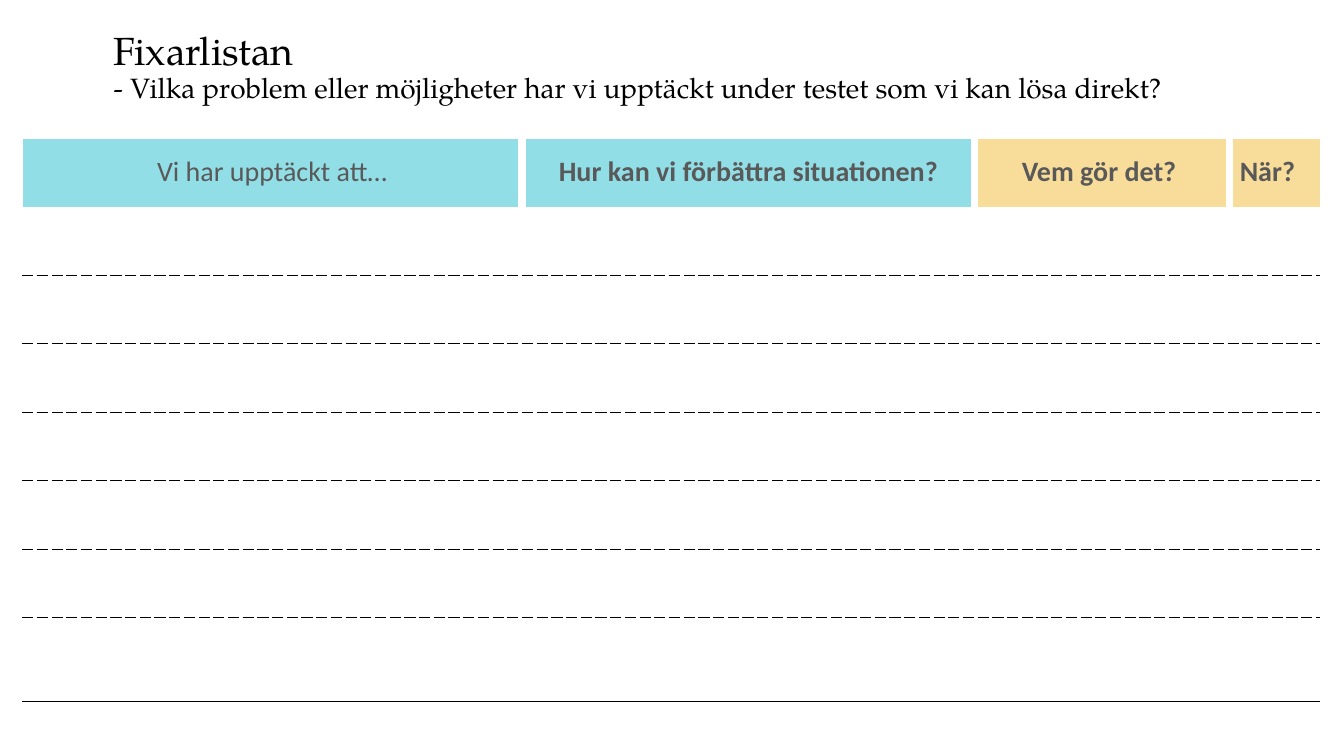
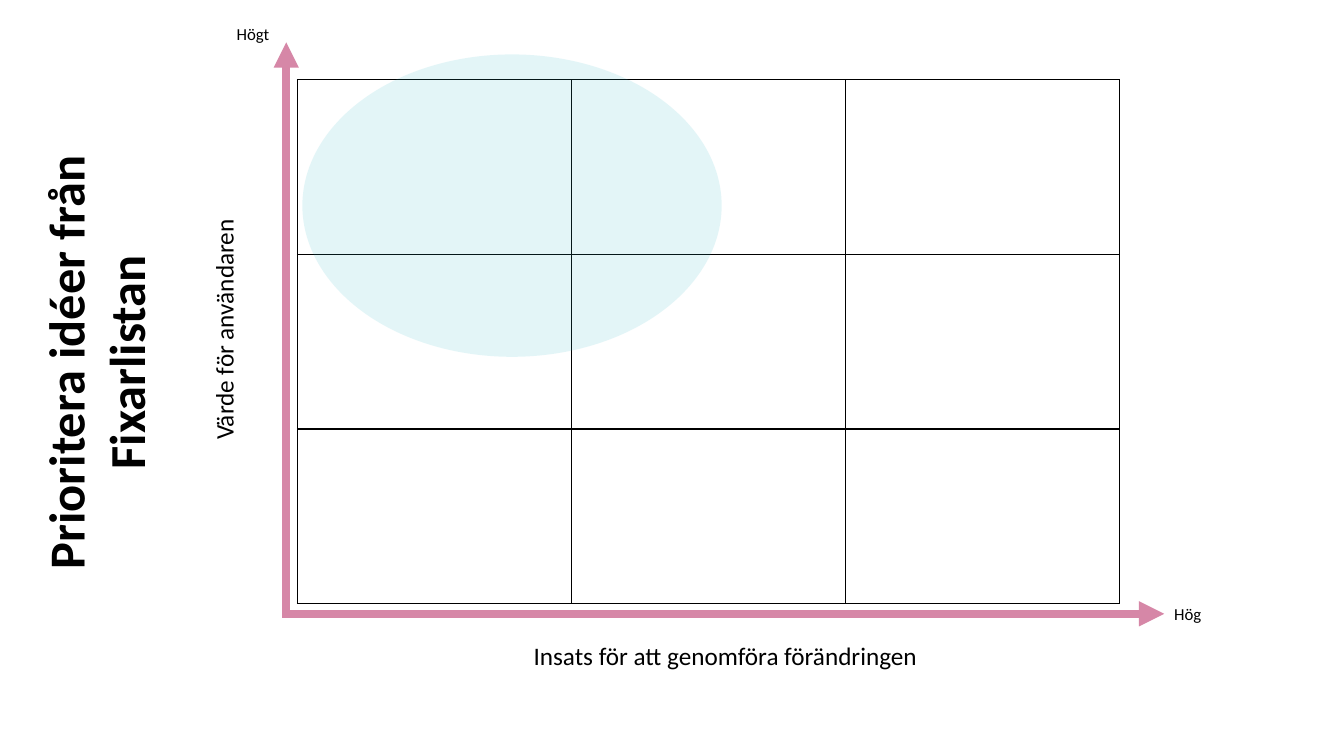
from dataclasses import dataclass

from lxml import etree
from pptx import Presentation, util as u
from pptx.dml.color import RGBColor
from pptx.enum import shapes, text
from pptx.oxml import ns

UNIT = u.Inches(1) // 12  # square grid: 160 columns by 90 rows
SLIDE_COLUMNS, SLIDE_ROWS = 160, 90


@dataclass(frozen=True)
class Theme:
    ink: str = "000000"
    paper: str = "FFFFFF"
    muted: str = "595959"
    aqua: str = "92DEE6"
    sand: str = "F8DD9A"
    teal: str = "2DB9C7"
    pink: str = "D687A7"
    body_font: str = "Calibri"
    title_font: str = "TeX Gyre Pagella"
    headline: int = 36
    title: int = 28
    subtitle: int = 20
    axis: int = 18
    scale_end: int = 12
    hairline: int = 1
    gap: int = 6
    axis_line: int = 6


THEME = Theme()
DASHED = (THEME.ink, THEME.hairline, "sysDash")
SOLID = (THEME.ink, THEME.hairline, "solid")
GUTTER = (THEME.paper, THEME.gap, "solid")
EDGE = (THEME.paper, THEME.hairline, "solid")


def grid(*lengths):
    return [round(length * UNIT) for length in lengths]


def sub(parent, tag, **attributes):
    return etree.SubElement(parent, ns.qn(tag), attributes)


def style(run, size, color=THEME.ink, font=THEME.body_font, bold=False):
    run.font.size = u.Pt(size)
    run.font.name = font
    run.font.bold = bold
    run.font.color.rgb = RGBColor.from_string(color)


def add_label(slide, box, wording, *sizes, font=THEME.body_font, bold=False,
              align=text.PP_ALIGN.LEFT, rotation=0):
    """Add a text box; each line takes its own size from sizes."""
    label = slide.shapes.add_textbox(*grid(*box))
    label.rotation = rotation
    frame = label.text_frame
    frame.word_wrap = True
    frame.text = wording
    paragraph = frame.paragraphs[0]
    paragraph.alignment = align
    for run, size in zip(paragraph.runs, sizes):
        style(run, size, font=font, bold=bold)
    return label


def set_borders(cell, left=None, right=None, top=None, bottom=None):
    properties = cell._tc.get_or_add_tcPr()
    for side, border in zip("LRTB", (left, right, top, bottom)):
        if border is None:
            sub(sub(properties, f"a:ln{side}", w="0"), "a:noFill")
            continue
        color, width, dash = border
        line = sub(properties, f"a:ln{side}", w=str(u.Pt(width)))
        sub(sub(line, "a:solidFill"), "a:srgbClr", val=color)
        sub(line, "a:prstDash", val=dash)


def fill_solid(fill, color):
    fill.solid()
    fill.fore_color.rgb = RGBColor.from_string(color)


def add_plain_table(slide, left, top, widths, heights):
    frame = slide.shapes.add_table(
        len(heights), len(widths),
        *grid(left, top, sum(widths), sum(heights)))
    table = frame.table
    table.first_row = table.horz_banding = False
    for column, width in zip(table.columns, grid(*widths)):
        column.width = width
    for row, height in zip(table.rows, grid(*heights)):
        row.height = height
    return table


def add_axis(slide, start, end):
    axis = slide.shapes.add_connector(
        shapes.MSO_CONNECTOR.STRAIGHT, *grid(*start, *end))
    axis.line.width = u.Pt(THEME.axis_line)
    axis.line.color.rgb = RGBColor.from_string(THEME.pink)
    sub(axis.line._get_or_add_ln(), "a:tailEnd", type="triangle")
    sub(axis._element.spPr, "a:effectLst")


def add_focus_area(slide, box, color, opacity):
    area = slide.shapes.add_shape(shapes.MSO_SHAPE.OVAL, *grid(*box))
    area.shadow.inherit = False
    area.line.fill.background()
    fill_solid(area.fill, color)
    tint = area._element.spPr.find(".//" + ns.qn("a:srgbClr"))
    sub(tint, "a:alpha", val=str(opacity * 1000))


def build_fix_list(slide):
    title = add_label(
        slide, (12.36, 1.56, 145.92, 13.08),
        "Fixarlistan\v- Vilka problem eller möjligheter har vi upptäckt "
        "under testet som vi kan lösa direkt?",
        THEME.title, THEME.subtitle, font=THEME.title_font)
    title.text_frame.vertical_anchor = text.MSO_ANCHOR.MIDDLE
    title.text_frame.paragraphs[0].line_spacing = 0.9

    headings = [
        ("Vi har upptäckt att…", THEME.aqua, False, text.PP_ALIGN.CENTER),
        ("Hur kan vi förbättra situationen?", THEME.aqua, True,
         text.PP_ALIGN.CENTER),
        ("Vem gör det? ", THEME.sand, True, text.PP_ALIGN.CENTER),
        ("När?", THEME.sand, True, text.PP_ALIGN.LEFT),
    ]
    table = add_plain_table(slide, 2.64, 16.44,
                            (59.52, 53.88, 30.36, 10.8), [8.16] * 7 + [10])
    last_column, last_row = len(headings) - 1, len(table.rows) - 1

    for index, (wording, color, bold, align) in enumerate(headings):
        cell = table.cell(0, index)
        set_borders(cell, GUTTER if index else EDGE,
                    GUTTER if index < last_column else EDGE, top=EDGE)
        fill_solid(cell.fill, color)
        cell.vertical_anchor = text.MSO_ANCHOR.MIDDLE
        cell.text_frame.text = wording
        paragraph = cell.text_frame.paragraphs[0]
        paragraph.alignment = align
        style(paragraph.runs[0], THEME.subtitle, THEME.muted, bold=bold)

    for row in range(1, last_row + 1):
        table.cell(row, 2).merge(table.cell(row, last_column))
        for column in range(last_column + 1):
            cell = table.cell(row, column)
            set_borders(cell,
                        left=GUTTER if column in (1, 2) else None,
                        right=GUTTER if column < 2 else None,
                        top=DASHED if row > 1 else None,
                        bottom=DASHED if row < last_row else SOLID)
            cell.fill.background()


def build_priority_matrix(slide):
    matrix = add_plain_table(slide, 35.4, 9.48, [32.64] * 3, [20.8] * 3)
    for cell in matrix.iter_cells():
        set_borders(cell, SOLID, SOLID, SOLID, SOLID)
        fill_solid(cell.fill, THEME.paper)

    add_axis(slide, (34.08, 73.56), (34.08, 5.04))
    add_axis(slide, (34.08, 73.08), (138.6, 73.08))
    centre = text.PP_ALIGN.CENTER
    add_label(slide, (9.84, 36.84, 33.6, 4.8), "Värde för användaren",
              THEME.axis, align=centre, rotation=270)
    add_label(slide, (62.04, 75.6, 48.6, 4.8),
              "Insats för att genomföra förändringen",
              THEME.axis, align=centre)
    add_focus_area(slide, (36, 6.48, 49.92, 36), THEME.teal, 13)
    for wording, left, top in (("Hög", 138.6, 71.28), ("Högt", 27, 2.28)):
        add_label(slide, (left, top, 7.08, 3.6), wording, THEME.scale_end)
    add_label(slide, (-21, 35.28, 64.68, 15.72),
              "Prioritera idéer från Fixarlistan", THEME.headline,
              bold=True, align=centre, rotation=270)


def main():
    deck = Presentation()
    deck.slide_width, deck.slide_height = grid(SLIDE_COLUMNS, SLIDE_ROWS)
    blank = deck.slide_layouts[6]
    for build in (build_fix_list, build_priority_matrix):
        build(deck.slides.add_slide(blank))
    deck.save("out.pptx")


if __name__ == "__main__":
    main()
